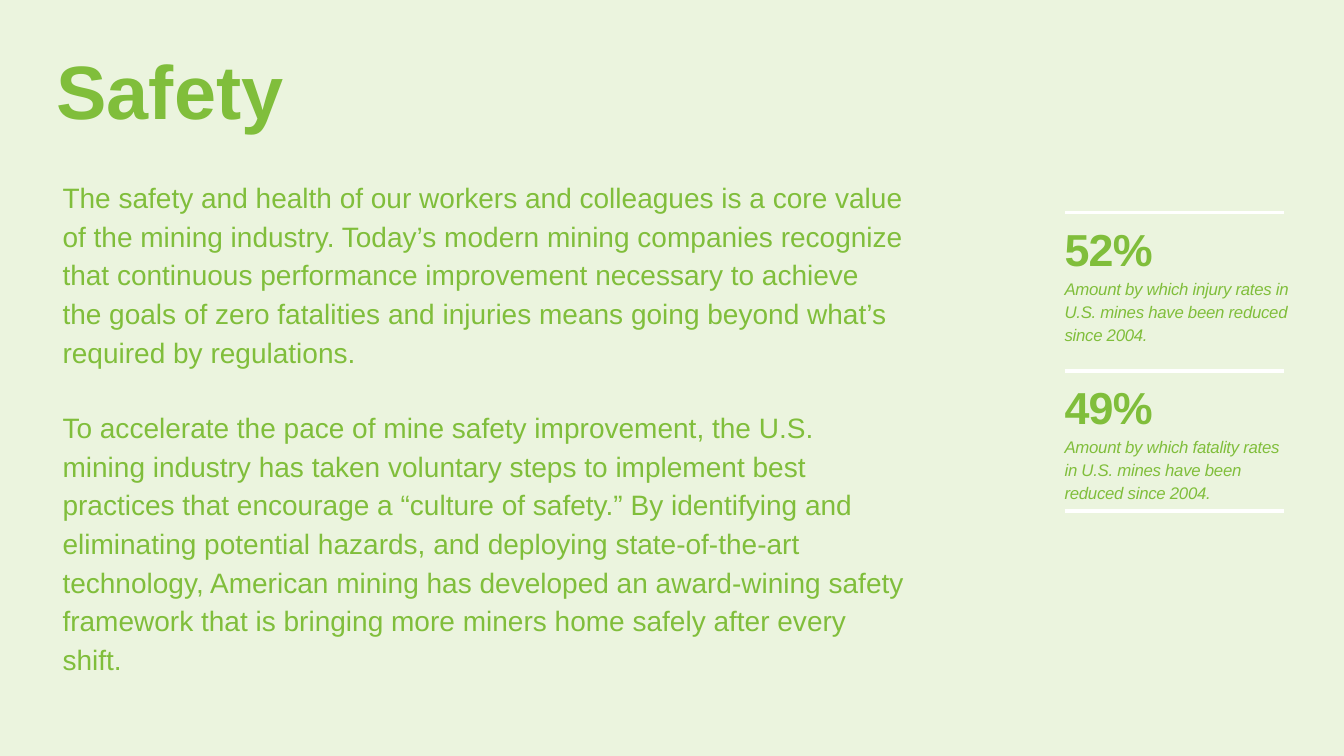
from lxml import etree
from pptx import Presentation
from pptx import util as u
from pptx.dml.color import RGBColor
from pptx.enum import shapes, text
from pptx.oxml.ns import qn

HUES = {"back": "EBF4DE", "green": "80BE3B", "rule": "FFFFFF"}

BODY = [
    "The safety and health of our workers and colleagues is a core value of the "
    "mining industry. Today’s modern mining companies recognize that continuous "
    "performance improvement necessary to achieve the goals of zero fatalities "
    "and injuries means going beyond what’s required by regulations.",
    "To accelerate the pace of mine safety improvement, the U.S. mining industry "
    "has taken voluntary steps to implement best practices that encourage a "
    "“culture of safety.” By identifying and eliminating potential hazards, and "
    "deploying state-of-the-art technology, American mining has developed an "
    "award-wining safety framework that is bringing more miners home safely "
    "after every shift.",
]
STATS = [
    ("52%", "Amount by which injury rates in U.S. mines have been reduced since 2004."),
    ("49%", "Amount by which fatality rates \vin U.S. mines have been \vreduced since 2004."),
]


def hue(name):
    return RGBColor.from_string(HUES[name])


def style(para, size, bold=False, italic=False, track=0, lead=1.0):
    """Format a paragraph and its runs; track is in hundredths of a point."""
    para.alignment = text.PP_ALIGN.LEFT
    para.line_spacing = lead
    para.space_before = u.Pt(0)
    for run in para.runs:
        font = run.font
        font.name, font.size = "Arial", u.Pt(size)
        font.bold, font.italic = bold, italic
        font.color.rgb = hue("green")
        if track:
            run._r.get_or_add_rPr().set("spc", str(track))


def place(shape, box):
    shape.left, shape.top, shape.width, shape.height = map(u.Inches, box)
    frame = shape.text_frame
    frame.word_wrap = True
    frame.auto_size = text.MSO_AUTO_SIZE.SHAPE_TO_FIT_TEXT
    frame.vertical_anchor = text.MSO_ANCHOR.TOP
    return frame


def title(slide, box):
    frame = place(slide.shapes.title, box)
    frame.text = "Safety"
    style(frame.paragraphs[0], 54, bold=True, lead=0.85)


def body(slide, box):
    frame = place(slide.placeholders[1], box)
    frame.text = "\n".join(BODY)
    for para in frame.paragraphs:
        style(para, 20, lead=1.15)
        props = para._p.get_or_add_pPr()
        props.set("marL", "0")
        props.set("indent", "0")
        etree.SubElement(props, qn("a:buNone"))
    frame.paragraphs[1].space_before = u.Pt(26.4)


def rule(slide, left, top, width):
    line = slide.shapes.add_connector(
        shapes.MSO_CONNECTOR.STRAIGHT,
        u.Inches(left), u.Inches(top), u.Inches(left + width), u.Inches(top))
    line.line.color.rgb = hue("rule")
    line.line.width = u.Pt(2.25)
    etree.SubElement(line._element.spPr, qn("a:effectLst"))


def stat(slide, box, value, note):
    """Place a ruled figure and its caption; the box starts at the rule."""
    left, top, width, height = box
    rule(slide, left, top, width)
    area = slide.shapes.add_textbox(0, 0, 0, 0)
    frame = place(area, (left - 0.1, top + 0.04, width + 0.4, height))
    frame.text = value
    style(frame.paragraphs[0], 32, bold=True, track=-50)
    para = frame.add_paragraph()
    para.text = note
    style(para, 12, italic=True, track=-20, lead=1.15)


def panel(slide, box):
    left, top, width, height = box
    for i, (value, note) in enumerate(STATS):
        stat(slide, (left, top + i * 1.57, width, 1.3), value, note)
    rule(slide, left, top + height, width)


def main():
    deck = Presentation()
    deck.slide_width, deck.slide_height = u.Inches(13.33), u.Inches(7.5)
    slide = deck.slides.add_slide(deck.slide_layouts[1])
    fill = slide.background.fill
    fill.solid()
    fill.fore_color.rgb = hue("back")
    title(slide, (0.46, 0.52, 8.29, 0.86))
    body(slide, (0.52, 1.69, 8.55, 4.54))
    panel(slide, (10.56, 2.11, 2.18, 2.96))
    deck.save("out.pptx")


if __name__ == "__main__":
    main()
